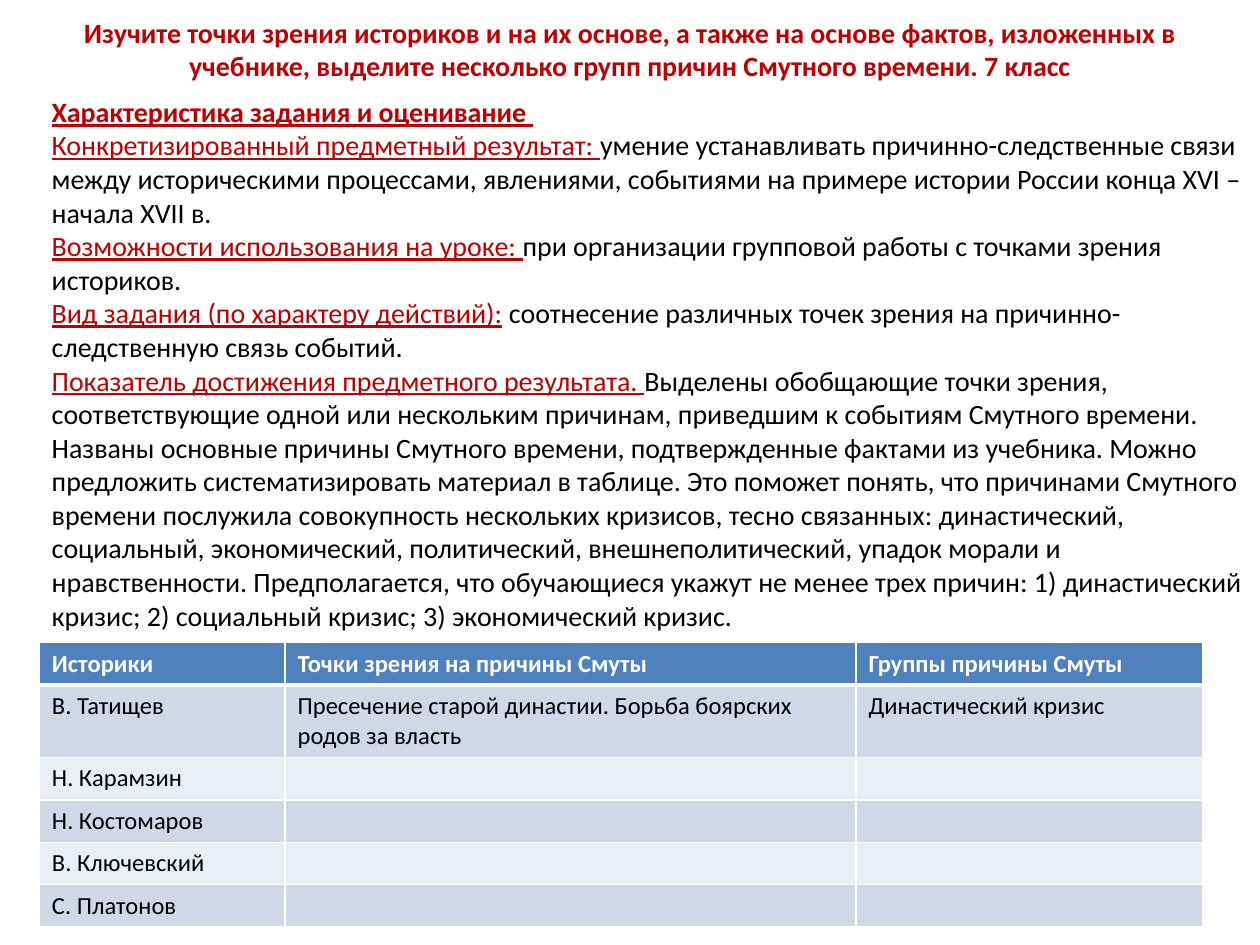
"""Builds a history task slide: heading, task description and a table of historians' views."""
import pptx
import pptx.dml.color
import pptx.enum.text
import pptx.oxml
import pptx.oxml.ns
import pptx.util
from dataclasses import dataclass

Pt = pptx.util.Pt


@dataclass(frozen=True)
class Theme:
    font: str = "Calibri"
    accent: str = "C00000"
    text: str = "000000"
    white: str = "FFFFFF"
    header: str = "4F81BD"
    bands: tuple = ("D0D8E8", "E9EDF4")
    main_size: int = 16
    table_size: int = 14


theme = Theme()


def add_run(paragraph, words, size, color, bold=False, underline=False):
    run = paragraph.add_run()
    run.text = words
    run.font.name = theme.font
    run.font.size = Pt(size)
    run.font.bold = bold
    run.font.underline = underline
    run.font.color.rgb = pptx.dml.color.RGBColor.from_string(color)


def add_border(cell, side, width):
    cell._tc.get_or_add_tcPr().append(pptx.oxml.parse_xml(
        f'<a:ln{side} {pptx.oxml.ns.nsdecls("a")} w="{Pt(width)}"><a:solidFill>'
        f'<a:srgbClr val="{theme.white}"/></a:solidFill></a:ln{side}>'))


presentation = pptx.Presentation()
presentation.slide_width, presentation.slide_height = Pt(720), Pt(540)
slide = presentation.slides.add_slide(presentation.slide_layouts[5])

heading = slide.shapes.title
heading.left, heading.top, heading.width, heading.height = Pt(36), Pt(0), Pt(648), Pt(56)
heading.text_frame.vertical_anchor = pptx.enum.text.MSO_ANCHOR.MIDDLE
heading.text_frame.paragraphs[0].alignment = pptx.enum.text.PP_ALIGN.CENTER
add_run(heading.text_frame.paragraphs[0],
        "Изучите точки зрения историков и на их основе, а также на основе фактов, "
        "изложенных в учебнике, выделите несколько групп причин Смутного времени. 7 класс",
        theme.main_size, theme.accent, bold=True)

historian_rows = [
    ("Историки", "Точки зрения на причины Смуты", "Группы причины Смуты"),
    ("В. Татищев", "Пресечение старой династии. Борьба боярских родов за власть",
     "Династический кризис"),
    ("Н. Карамзин", "", ""),
    ("Н. Костомаров", "", ""),
    ("В. Ключевский", "", ""),
    ("С. Платонов", "", ""),
]
column_widths = [140.4, 326.2, 198]
row_heights = [24.2, 41, 24.2, 24.2, 24.2, 24.2]
views = slide.shapes.add_table(len(historian_rows), len(column_widths), Pt(22.5), Pt(367.2),
                               Pt(sum(column_widths)), Pt(sum(row_heights))).table
for column, width in zip(views.columns, column_widths):
    column.width = Pt(width)
for index, (entries, height) in enumerate(zip(historian_rows, row_heights)):
    is_header = index == 0
    views.rows[index].height = Pt(height)
    band = theme.header if is_header else theme.bands[(index - 1) % 2]
    for position, words in enumerate(entries):
        cell = views.cell(index, position)
        for side in "LRTB":
            thick = (is_header and side == "B") or (index == 1 and side == "T")
            add_border(cell, side, 3 if thick else 1)
        cell.fill.solid()
        cell.fill.fore_color.rgb = pptx.dml.color.RGBColor.from_string(band)
        paragraph = cell.text_frame.paragraphs[0]
        if words:
            add_run(paragraph, words, theme.table_size,
                    theme.white if is_header else theme.text, bold=is_header)
        else:
            paragraph._p.append(pptx.oxml.parse_xml(
                f'<a:endParaRPr {pptx.oxml.ns.nsdecls("a")} sz="{theme.table_size * 100}"/>'))

criteria = [
    ("Характеристика задания и оценивание ", ""),
    ("Конкретизированный предметный результат: ",
     "умение устанавливать причинно-следственные связи между историческими процессами, "
     "явлениями, событиями на примере истории России конца XVI – начала XVII в."),
    ("Возможности использования на уроке: ",
     "при организации групповой работы с точками зрения историков."),
    ("Вид задания (по характеру действий):",
     " соотнесение различных точек зрения на причинно-следственную связь событий."),
    ("Показатель достижения предметного результата. ",
     "Выделены обобщающие точки зрения, соответствующие одной или нескольким причинам, "
     "приведшим к событиям Смутного времени. Названы основные причины Смутного времени, "
     "подтвержденные фактами из учебника. Можно предложить систематизировать материал в "
     "таблице. Это поможет понять, что причинами Смутного времени послужила совокупность "
     "нескольких кризисов, тесно связанных: династический, социальный, экономический, "
     "политический, внешнеполитический, упадок морали и нравственности. Предполагается, что "
     "обучающиеся укажут не менее трех причин: 1) династический кризис; 2) социальный "
     "кризис; 3) экономический кризис."),
]
description = slide.shapes.add_textbox(Pt(22.5), Pt(50.4), Pt(697.5), Pt(317.5)).text_frame
description.word_wrap = True
description.auto_size = pptx.enum.text.MSO_AUTO_SIZE.SHAPE_TO_FIT_TEXT
for index, (label, explanation) in enumerate(criteria):
    paragraph = description.add_paragraph() if index else description.paragraphs[0]
    add_run(paragraph, label, theme.main_size, theme.accent,
            bold=not explanation, underline=True)
    if explanation:
        add_run(paragraph, explanation, theme.main_size, theme.text)

presentation.save("out.pptx")
